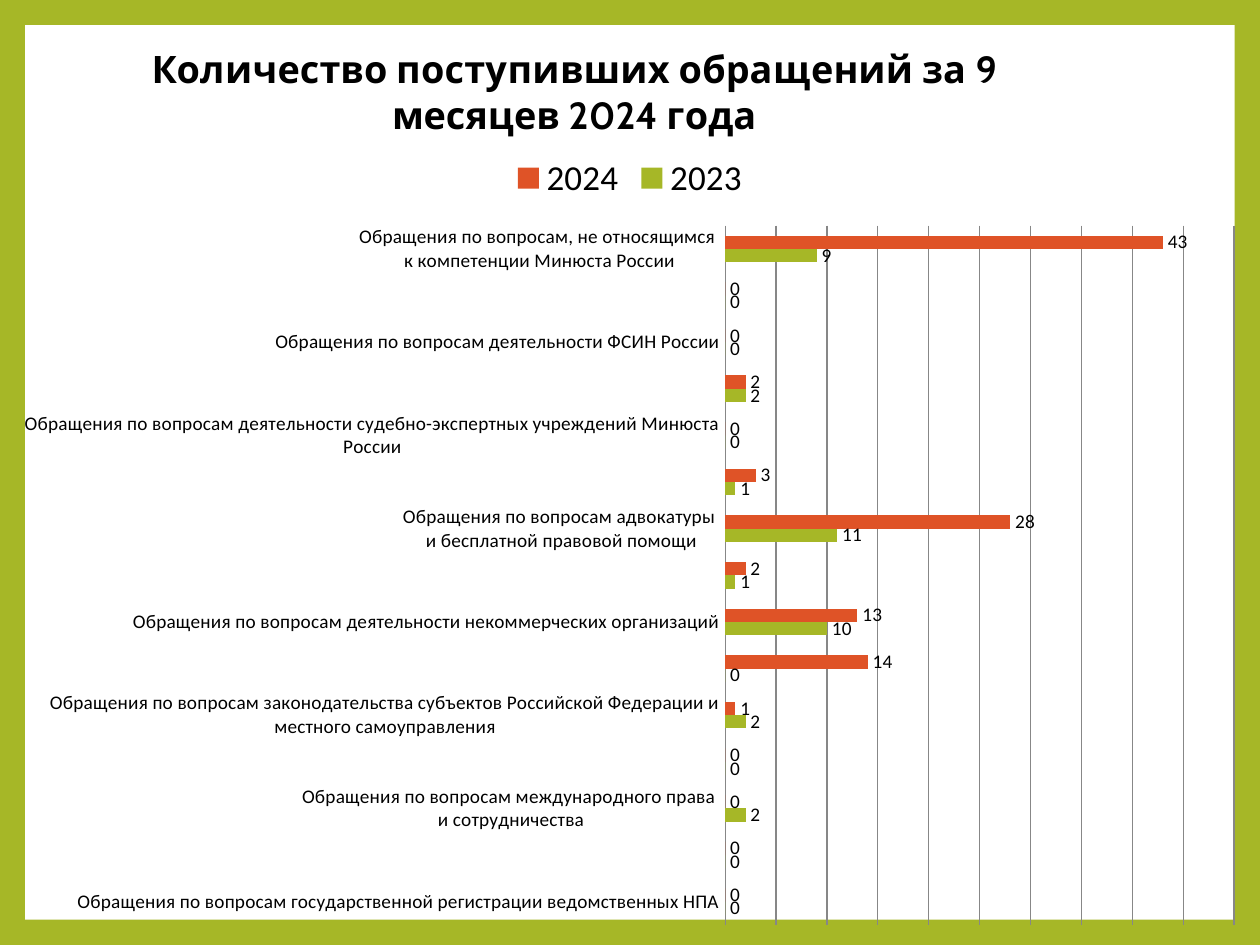
import pptx
import pptx.chart.data
import pptx.dml.color
import pptx.enum.chart
import pptx.enum.shapes
import pptx.oxml
import pptx.oxml.ns
import pptx.util

COLOURS = {
    "green": "A6B727",
    "orange": "DF5327",
    "white": "FFFFFF",
    "black": "000000",
    "grid": "878787",
}
ABOUT = "Обращения по вопросам "
REQUESTS = [
    (ABOUT + "государственной регистрации ведомственных НПА", 0, 0),
    ("", 0, 0),
    (ABOUT + "международного права \nи сотрудничества", 2, 0),
    ("", 0, 0),
    (ABOUT + "законодательства субъектов Российской Федерации и местного самоуправления", 2, 1),
    ("", 0, 14),
    (ABOUT + "деятельности некоммерческих организаций", 10, 13),
    ("", 1, 2),
    (ABOUT + "адвокатуры \nи бесплатной правовой помощи", 11, 28),
    ("", 1, 3),
    (ABOUT + "деятельности судебно-экспертных учреждений Минюста России", 0, 0),
    ("", 2, 2),
    (ABOUT + "деятельности ФСИН России", 0, 0),
    ("", 0, 0),
    ("Обращения по вопросам, не относящимся \nк компетенции Минюста России", 9, 43),
]


def colour(name):
    return pptx.dml.color.RGBColor.from_string(COLOURS[name])


def style_font(font, size, face="Calibri", bold=False):
    font.size = pptx.util.Pt(size)
    font.name = face
    font.bold = bold
    font.color.rgb = colour("black")


def style_line(line):
    line.color.rgb = colour("grid")
    line.width = pptx.util.Pt(0.75)


def set_layout(element, width, height, position, inner=False):
    for old in element.findall(pptx.oxml.ns.qn("c:layout")):
        element.remove(old)
    target = '<c:layoutTarget val="inner"/>' if inner else ""
    modes = "".join(f'<c:{axis}Mode val="edge"/>' for axis in "xy")
    totals = {"x": width, "y": height, "w": width, "h": height}
    values = "".join(
        f'<c:{key} val="{pptx.util.Cm(length) / totals[key]:.4f}"/>'
        for key, length in position.items()
    )
    layout = pptx.oxml.parse_xml(
        f'<c:layout {pptx.oxml.ns.nsdecls("c")}><c:manualLayout>'
        f"{target}{modes}{values}</c:manualLayout></c:layout>"
    )
    overlay = element.find(pptx.oxml.ns.qn("c:overlay"))
    if overlay is None:
        element.insert(0, layout)
    else:
        overlay.addprevious(layout)


def add_frame(page, left, top, width, height):
    margin = pptx.util.Cm(0.51)
    page.background.fill.solid()
    page.background.fill.fore_color.rgb = colour("green")
    panel = page.shapes.add_shape(
        pptx.enum.shapes.MSO_SHAPE.RECTANGLE,
        left + margin, top + margin, width - 2 * margin, height - 2 * margin,
    )
    panel.shadow.inherit = False
    panel.fill.solid()
    panel.fill.fore_color.rgb = colour("white")
    panel.line.fill.background()


def add_requests_chart(page, left, top, width, height):
    names, previous, current = zip(*REQUESTS)
    data = pptx.chart.data.CategoryChartData()
    data.categories = names
    data.add_series("2023", previous)
    data.add_series("2024", current)
    chart = page.shapes.add_chart(
        pptx.enum.chart.XL_CHART_TYPE.BAR_CLUSTERED, left, top, width, height, data
    ).chart
    style_font(chart.font, 18, "Cabin")

    chart.has_title = True
    span = chart.chart_title.text_frame.paragraphs[0].add_run()
    span.text = "Количество поступивших обращений за 9 месяцев 2024 года"
    style_font(span.font, 21.6, "Cabin", True)
    chart.chart_title.include_in_layout = False
    set_layout(chart.chart_title._element, width, height, {"x": 2.92, "y": 0.71})

    chart.has_legend = True
    chart.legend.position = pptx.enum.chart.XL_LEGEND_POSITION.TOP
    chart.legend.include_in_layout = False
    style_font(chart.legend.font, 20)

    category_axis = chart.category_axis
    category_axis.major_tick_mark = pptx.enum.chart.XL_TICK_MARK.NONE
    style_font(category_axis.tick_labels.font, 11)
    style_line(category_axis.format.line)

    value_axis = chart.value_axis
    value_axis.minimum_scale = 0
    value_axis.maximum_scale = 50
    value_axis.major_unit = 5
    value_axis.has_major_gridlines = True
    style_line(value_axis.major_gridlines.format.line)
    value_axis.visible = False

    plot = chart.plots[0]
    plot.gap_width = 150
    plot.vary_by_categories = False
    for series, name in zip(plot.series, ("green", "orange")):
        series.format.fill.solid()
        series.format.fill.fore_color.rgb = colour(name)
        labels = series.data_labels
        labels.show_value = True
        labels.position = pptx.enum.chart.XL_LABEL_POSITION.OUTSIDE_END
        style_font(labels.font, 11)
    plot_area = chart._chartSpace.chart.plotArea
    plot_box = {"x": 14.62, "y": 4.55, "w": 10.26, "h": 14.1}
    set_layout(plot_area, width, height, plot_box, inner=True)


def main():
    deck = pptx.Presentation()
    deck.slide_width = pptx.util.Cm(25.4)
    deck.slide_height = pptx.util.Cm(19.05)
    page = deck.slides.add_slide(deck.slide_layouts[6])
    box = (0, 0, deck.slide_width, deck.slide_height)
    add_frame(page, *box)
    add_requests_chart(page, *box)
    deck.save("out.pptx")


if __name__ == "__main__":
    main()
